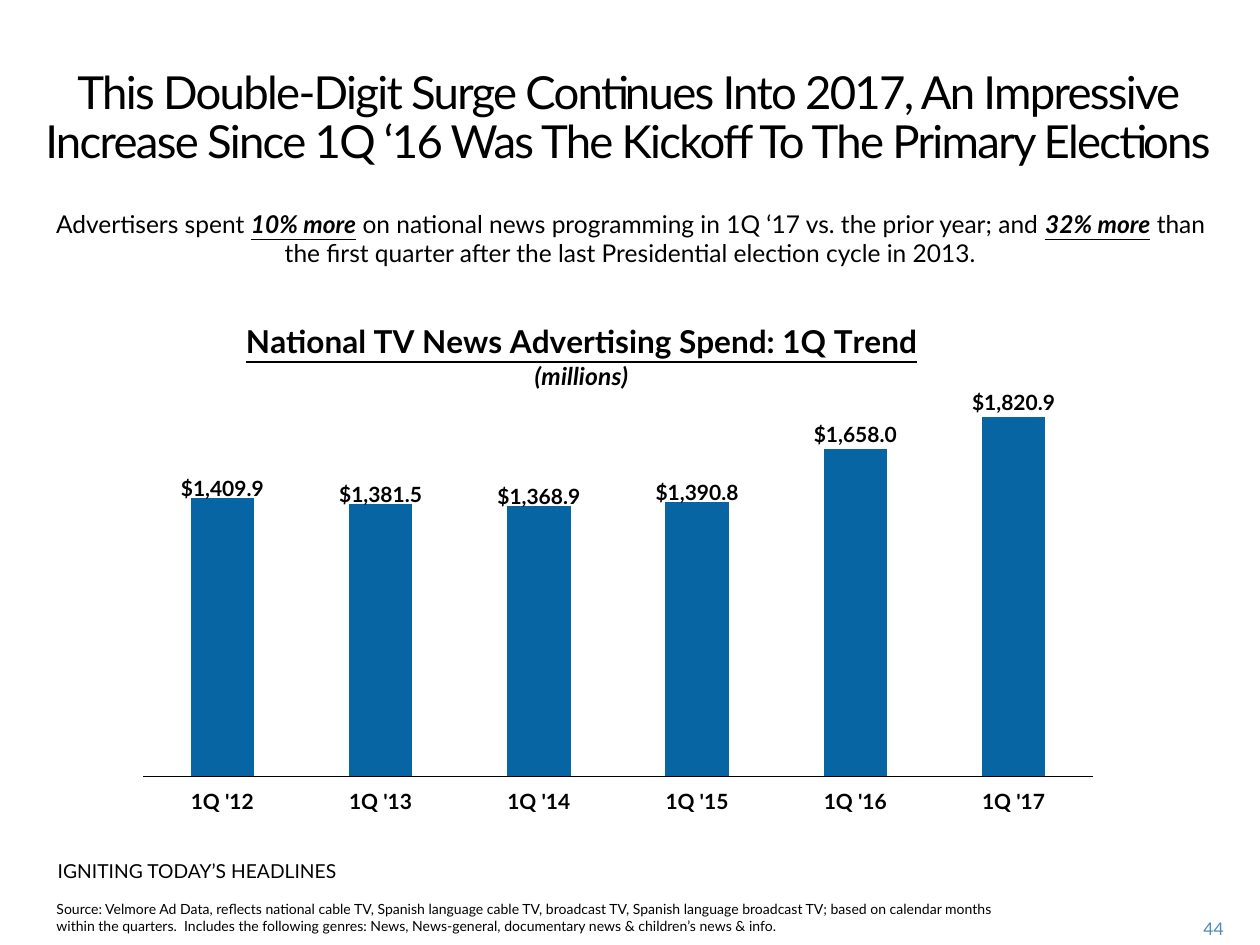
from dataclasses import dataclass

from lxml.etree import SubElement
from pptx import Presentation
from pptx.chart.data import CategoryChartData
from pptx.dml.color import RGBColor
from pptx.enum.chart import XL_CHART_TYPE, XL_LABEL_POSITION, XL_TICK_LABEL_POSITION, XL_TICK_MARK
from pptx.enum.text import MSO_ANCHOR, PP_ALIGN
from pptx.oxml.ns import qn
from pptx.util import Inches, Pt

BLACK = RGBColor(0x00, 0x00, 0x00)
BAR_BLUE = RGBColor(0x07, 0x65, 0xA3)
PAGE_BLUE = RGBColor(0x50, 0x8A, 0xBA)
FONT = "Lato"
DOLLARS = '"$"#,##0.0'

# Quarter, spend in millions, upward shift of the label as a share of chart height
SPEND = [
    ("1Q '12", 1409.9, 0.05),
    ("1Q '13", 1381.5, 0.05),
    ("1Q '14", 1368.9, 0.05),
    ("1Q '15", 1390.8, 0.05),
    ("1Q '16", 1658.0, 0.06),
    ("1Q '17", 1820.9, 0.06),
]


@dataclass
class TextBlock:
    """A text box; every second run is emphasised."""
    left: float
    top: float
    width: float
    height: float
    runs: list[str]
    size: int
    align: PP_ALIGN = PP_ALIGN.LEFT
    color: RGBColor = BLACK
    line_pt: float | None = None
    tracking_pt: float = 0


TEXTS = [
    TextBlock(0.08, 0.5, 9.81, 0.68,
              ["This Double-Digit Surge Continues Into 2017, An Impressive "
               "Increase Since 1Q ‘16 Was The Kickoff To The Primary Elections"],
              26, PP_ALIGN.CENTER, line_pt=28, tracking_pt=-1),
    TextBlock(0.19, 1.61, 9.63, 0.4,
              ["Advertisers spent ", "10% more",
               " on national news programming in 1Q ‘17 vs. the prior year; and ", "32% more",
               " than the first quarter after the last Presidential election cycle in 2013."],
              14, PP_ALIGN.CENTER),
    TextBlock(0.36, 6.77, 2.72, 0.47, ["IGNITING TODAY’S HEADLINES"], 11),
    TextBlock(0.35, 7.1, 7.9, 0.29,
              ["Source: Velmore Ad Data, reflects national cable TV, Spanish language cable TV, "
               "broadcast TV, Spanish language broadcast TV; based on calendar months within the "
               "quarters.  Includes the following genres: News, News-general, documentary news & "
               "children’s news & info."], 8),
    TextBlock(9.2, 7.24, 0.61, 0.25, ["44"], 10, PP_ALIGN.RIGHT, PAGE_BLUE),
]


def style_font(font, size: float, bold: bool = False, color: RGBColor = BLACK) -> None:
    font.name = FONT
    font.size = Pt(size)
    font.bold = bold
    font.color.rgb = color


def add_text(slide, block: TextBlock) -> None:
    box = slide.shapes.add_textbox(Inches(block.left), Inches(block.top),
                                   Inches(block.width), Inches(block.height))
    tf = box.text_frame
    tf.word_wrap = True
    tf.vertical_anchor = MSO_ANCHOR.TOP
    p = tf.paragraphs[0]
    p.alignment = block.align
    if block.line_pt:
        p.line_spacing = Pt(block.line_pt)
    for i, text in enumerate(block.runs):
        r = p.add_run()
        r.text = text
        emphasised = i % 2 == 1
        style_font(r.font, block.size, emphasised, block.color)
        r.font.italic = r.font.underline = emphasised
        if block.tracking_pt:
            r.font._element.set("spc", str(int(block.tracking_pt * 100)))


def set_layout(element, after: str, **values: str | float) -> None:
    """Give a chart element a manual layout, placed behind the named child."""
    for old in element.findall(qn("c:layout")):
        element.remove(old)
    layout = SubElement(element, qn("c:layout"))
    manual = SubElement(layout, qn("c:manualLayout"))
    for tag, value in values.items():
        SubElement(manual, qn(f"c:{tag}")).set("val", str(value))
    previous = element.find(qn(after)) if after else None
    if previous is None:
        element.insert(0, layout)
    else:
        previous.addnext(layout)


def add_chart_title(chart) -> None:
    tf = chart.chart_title.text_frame
    tf.text = "National TV News Advertising Spend: 1Q Trend"
    heading = tf.paragraphs[0].runs[0]
    style_font(heading.font, 18, True)
    heading.font.underline = True
    r = tf.add_paragraph().add_run()
    r.text = "(millions)"
    style_font(r.font, 14, True)
    r.font.italic = True
    set_layout(chart.chart_title._element, "c:tx", xMode="edge", yMode="edge", x=0.12, y=0.08)


def add_spend_chart(slide) -> None:
    data = CategoryChartData(number_format=DOLLARS)
    data.categories = [quarter for quarter, _, _ in SPEND]
    data.add_series("Series 1", [value for _, value, _ in SPEND])
    chart = slide.shapes.add_chart(XL_CHART_TYPE.COLUMN_STACKED, Inches(0.98), Inches(2.16),
                                   Inches(7.85), Inches(4.35), data).chart
    chart.has_legend = False
    style_font(chart.font, 10)
    add_chart_title(chart)

    values = chart.value_axis
    values.visible = False
    values.has_major_gridlines = False
    values.minimum_scale, values.maximum_scale = 0, 2000
    cats = chart.category_axis
    cats.major_tick_mark = cats.minor_tick_mark = XL_TICK_MARK.NONE
    cats.tick_label_position = XL_TICK_LABEL_POSITION.LOW
    style_font(cats.tick_labels.font, 12, True)
    cats.format.line.color.rgb = BLACK
    cats.format.line.width = Pt(0.75)

    plot = chart.plots[0]
    plot.gap_width, plot.overlap = 150, 100
    plot.vary_by_categories = False
    series = plot.series[0]
    series.format.fill.solid()
    series.format.fill.fore_color.rgb = BAR_BLUE
    labels = series.data_labels
    labels.show_value = True
    labels.number_format = DOLLARS
    labels.number_format_is_linked = False
    labels.position = XL_LABEL_POSITION.INSIDE_END
    style_font(labels.font, 12, True)
    for i, (_, _, shift) in enumerate(SPEND):
        label = series.points[i].data_label
        style_font(label.font, 12, True)
        label.position = XL_LABEL_POSITION.INSIDE_END
    for element, (_, _, shift) in zip(labels._element.findall(qn("c:dLbl")), SPEND):
        set_layout(element, "c:idx", x=0, y=-shift)

    set_layout(chart._chartSpace.chart.plotArea, "", layoutTarget="inner", xMode="edge",
               yMode="edge", x=0.02, y=0.2, w=0.96, h=0.72)


def main() -> None:
    prs = Presentation()
    prs.slide_width, prs.slide_height = Inches(10), Inches(7.5)
    slide = prs.slides.add_slide(prs.slide_layouts[6])
    add_spend_chart(slide)
    for block in TEXTS:
        add_text(slide, block)
    prs.save("out.pptx")


if __name__ == "__main__":
    main()
